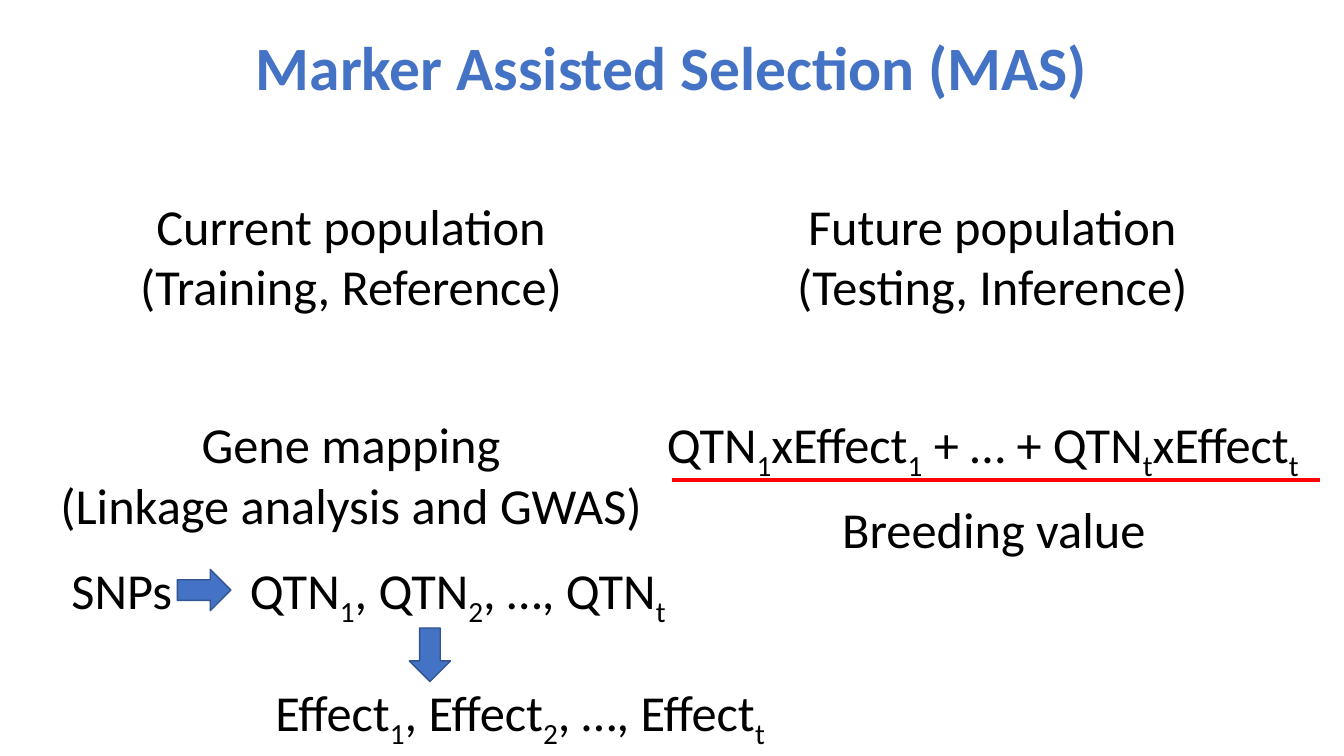
from lxml import etree
from pptx import Presentation
from pptx import util as u
from pptx.dml.color import RGBColor
from pptx.enum import shapes, text
from pptx.oxml.ns import qn

BLUE = RGBColor(0x44, 0x72, 0xC4)
EDGE = RGBColor(0x32, 0x54, 0x91)
RED = RGBColor(0xFF, 0x00, 0x00)
BLACK = RGBColor(0x00, 0x00, 0x00)
BODY = {"name": "Calibri", "size": u.Pt(36)}
HEAD = {"name": "Calibri", "size": u.Pt(44), "bold": True}
LEFT, WIDE = 0.48, 16.74
ONE, TWO = 1.8, 3.33


def style(font, form, color):
    """Apply a dict of format values and a colour to a font."""
    for key, val in form.items():
        setattr(font, key, val)
    font.color.rgb = color


def add_runs(para, line):
    """Write a line in which the letter after each underscore is a subscript."""
    first, *rest = line.split("_")
    parts = [(first, False)]
    for part in rest:
        parts += [(part[0], True), (part[1:], False)]
    for word, sub in parts:
        if word:
            run = para.add_run()
            run.text = word
            style(run.font, BODY, BLACK)
            if sub:
                run._r.get_or_add_rPr().set("baseline", "-25000")


def add_text(slide, box, *lines, align=text.PP_ALIGN.CENTER):
    """Add a text box with one paragraph per line."""
    frame = slide.shapes.add_textbox(*map(u.Cm, box)).text_frame
    frame.word_wrap = True
    frame.auto_size = text.MSO_AUTO_SIZE.SHAPE_TO_FIT_TEXT
    for i, line in enumerate(lines):
        para = frame.add_paragraph() if i else frame.paragraphs[0]
        para.alignment = align
        add_runs(para, line)
    return frame


def add_tab(para, pos):
    """Set a left tab stop on a paragraph."""
    stops = etree.SubElement(para._p.get_or_add_pPr(), qn("a:tabLst"))
    etree.SubElement(stops, qn("a:tab"), pos=str(u.Cm(pos)), algn="l")


def add_arrow(slide, left, top, turn=0):
    """Add a small blue block arrow."""
    box = map(u.Cm, (left, top, 1.35, 1.04))
    arrow = slide.shapes.add_shape(shapes.MSO_SHAPE.RIGHT_ARROW, *box)
    arrow.rotation = turn
    arrow.shadow.inherit = False
    arrow.fill.solid()
    arrow.fill.fore_color.rgb = BLUE
    arrow.line.color.rgb = EDGE
    arrow.line.width = u.Pt(1)


def add_rule(slide, left, right, top):
    """Add a level red line."""
    ends = map(u.Cm, (left, top, right, top))
    rule = slide.shapes.add_connector(shapes.MSO_CONNECTOR.STRAIGHT, *ends)
    rule.line.color.rgb = RED
    rule.line.width = u.Pt(3)
    etree.SubElement(rule._element.spPr, qn("a:effectLst"))


def set_title(slide, words):
    """Place and format the title."""
    title = slide.shapes.title
    box = map(u.Cm, (5.51, 0.2, 22.86, 3.18))
    for key, val in zip(("left", "top", "width", "height"), box):
        setattr(title, key, val)
    frame = title.text_frame
    frame.text = words
    frame.vertical_anchor = text.MSO_ANCHOR.MIDDLE
    para = frame.paragraphs[0]
    para.alignment = text.PP_ALIGN.CENTER
    para.line_spacing = 0.9
    style(para.runs[0].font, HEAD, BLUE)


def main():
    """Build the slide and save it."""
    deck = Presentation()
    deck.slide_width, deck.slide_height = u.Cm(33.87), u.Cm(19.05)
    slide = deck.slides.add_slide(deck.slide_layouts[5])
    set_title(slide, "Marker Assisted Selection (MAS)")
    add_text(slide, (LEFT, 4.78, WIDE, TWO),
             "Current population", "(Training, Reference)")
    add_text(slide, (16.64, 4.78, WIDE, TWO),
             "Future population", "(Testing, Inference)")
    add_text(slide, (LEFT, 10.29, WIDE, TWO),
             "Gene mapping", "(Linkage analysis and GWAS)")
    add_text(slide, (16.54, 10.29, WIDE, ONE),
             "QTN_1xEffect_1 + … + QTN_txEffect_t ")
    add_text(slide, (20.42, 12.42, 8.97, ONE), " Breeding value")
    add_rule(slide, 16.94, 33.27, 12.09)
    chain = add_text(slide, (1.55, 13.97, 16.13, ONE),
                     "SNPs\tQTN_1, QTN_2, …, QTN_t",
                     align=text.PP_ALIGN.LEFT)
    add_tab(chain.paragraphs[0], 4.5)
    add_arrow(slide, 4.47, 14.35)
    add_text(slide, (5.51, 17.04, 14.91, ONE),
             " Effect_1, Effect_2, …, Effect_t")
    add_arrow(slide, 10.16, 15.98, 90)
    deck.save("out.pptx")


if __name__ == "__main__":
    main()
